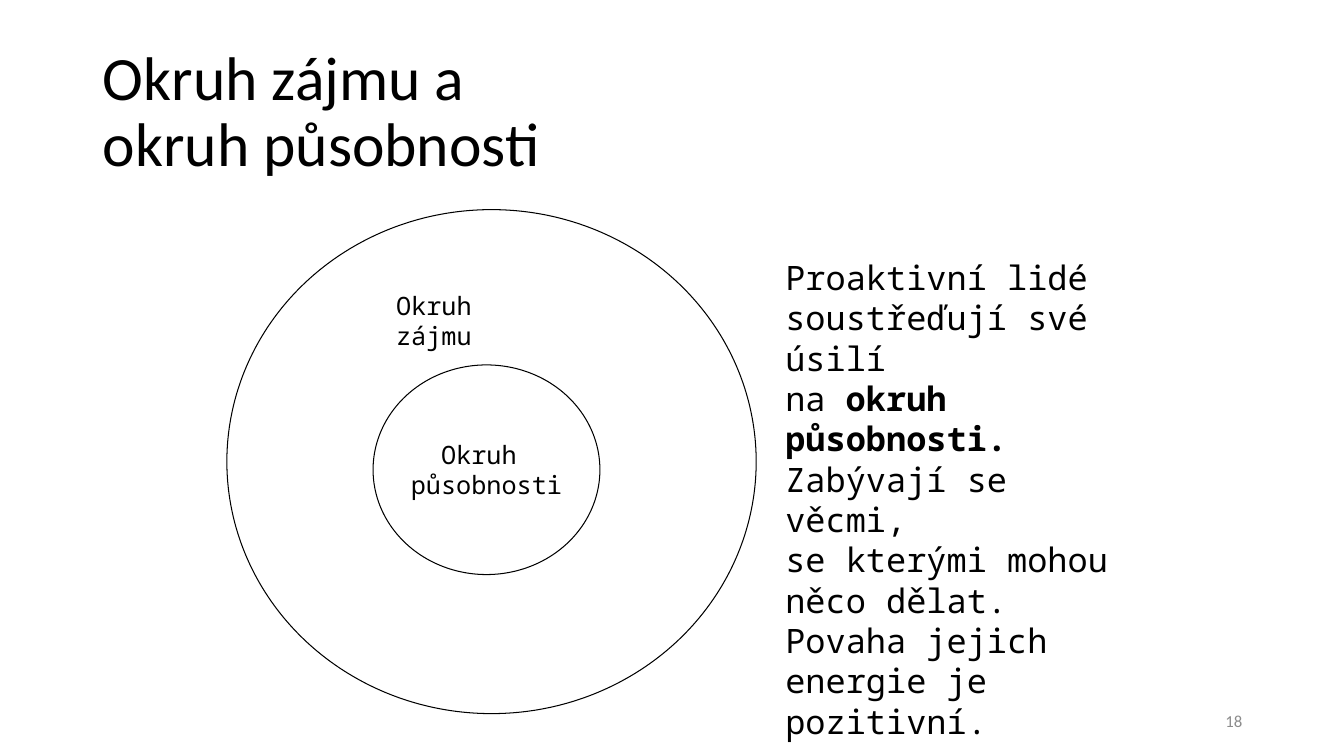
from pptx import Presentation
from pptx.dml.color import RGBColor
from pptx.enum.shapes import MSO_SHAPE
from pptx.enum.text import MSO_ANCHOR, MSO_AUTO_SIZE, PP_ALIGN
from pptx.util import Inches, Pt

OVAL = MSO_SHAPE.OVAL
TOP, MIDDLE = MSO_ANCHOR.TOP, MSO_ANCHOR.MIDDLE
LEFT, CENTER, RIGHT = PP_ALIGN.LEFT, PP_ALIGN.CENTER, PP_ALIGN.RIGHT
NO_FIT = MSO_AUTO_SIZE.NONE
COLORS = {"ink": "000000", "paper": "FFFFFF", "muted": "8C8C8C"}
SANS, MONO = "Calibri", "Noto Sans Mono"


def color(name):
    return RGBColor.from_string(COLORS[name])


def write(tf, paragraphs, size, font=MONO, ink="ink", align=LEFT,
          anchor=TOP, wrap=True, spacing=1.0):
    frame_format = {"auto_size": NO_FIT, "word_wrap": wrap, "vertical_anchor": anchor}
    for name, value in frame_format.items():
        setattr(tf, name, value)
    for i, runs in enumerate(paragraphs):
        p = tf.paragraphs[0] if i == 0 else tf.add_paragraph()
        for name, value in {"alignment": align, "line_spacing": spacing}.items():
            setattr(p, name, value)
        for j, text in enumerate(runs):
            if text == "\n":
                p.add_line_break()
                continue
            r = p.add_run()
            r.text = text
            for name, value in {"name": font, "size": Pt(size), "bold": j == 1}.items():
                setattr(r.font, name, value)
            r.font.color.rgb = color(ink)


def add_text(slide, box, paragraphs, size, **options):
    sp = slide.shapes.add_textbox(*map(Inches, box))
    write(sp.text_frame, paragraphs, size, **options)


def add_circle(slide, box):
    sp = slide.shapes.add_shape(OVAL, *map(Inches, box))
    sp.shadow.inherit = False
    sp.fill.solid()
    sp.fill.fore_color.rgb = color("paper")
    sp.line.color.rgb = color("ink")
    sp.line.width = Pt(0.75)
    return sp


def add_title(slide, box):
    sp = slide.shapes.title
    for name, value in zip(("left", "top", "width", "height"), box):
        setattr(sp, name, Inches(value))
    write(sp.text_frame, [["Okruh zájmu a ", "\n", "okruh působnosti"]], 44,
          font=SANS, anchor=MIDDLE, spacing=0.9)


def add_circles(slide, box):
    x, y, w, h = box
    add_circle(slide, box)
    inner = add_circle(slide, (x + 1.45, y + 1.54, 2.25, 2.08))
    write(inner.text_frame, [["Okruh "], ["působnosti"]], 18,
          align=CENTER, anchor=MIDDLE, wrap=False)
    add_text(slide, (x + 1.58, y + 0.75, 1.8, 0.4), [["Okruh zájmu"]], 18)


def add_statement(slide, box):
    add_text(slide, box, [
        ["Proaktivní lidé"],
        ["soustřeďují své úsilí"],
        ["na ", "okruh působnosti."],
        ["Zabývají se věcmi,"],
        ["se kterými mohou"],
        ["něco dělat."],
        ["Povaha jejich"],
        ["energie je pozitivní."],
    ], 24)


def add_page_number(slide, box):
    add_text(slide, box, [["18"]], 12, font=SANS, ink="muted", align=RIGHT, anchor=MIDDLE)


def main():
    prs = Presentation()
    prs.slide_width, prs.slide_height = Inches(13.33), Inches(7.5)
    slide = prs.slides.add_slide(prs.slide_layouts[5])
    add_title(slide, (0.92, 0.4, 11.5, 1.45))
    add_circles(slide, (2.25, 2.08, 5.25, 5))
    add_statement(slide, (7.69, 2.5, 3.57, 3.74))
    add_page_number(slide, (9.42, 6.95, 3, 0.4))
    prs.save("out.pptx")


if __name__ == "__main__":
    main()
